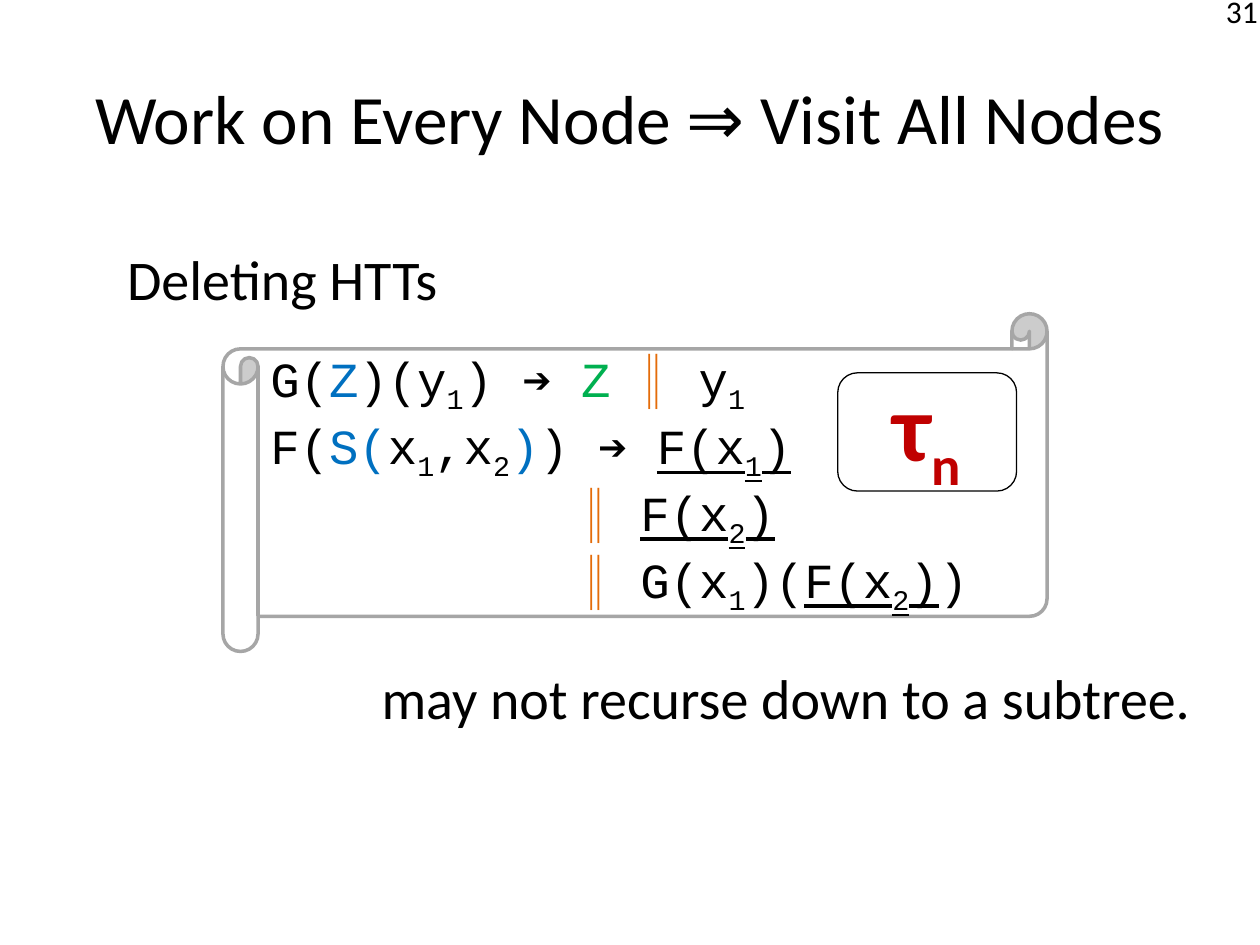
from pptx import Presentation
from pptx.dml.color import RGBColor
from pptx.enum.shapes import MSO_SHAPE as Shape
from pptx.enum.text import MSO_ANCHOR as Anchor, PP_ALIGN as Align
from pptx.util import Inches, Pt

BLACK = RGBColor(0x00, 0x00, 0x00)
WHITE = RGBColor(0xFF, 0xFF, 0xFF)
GRAY = RGBColor(0xA6, 0xA6, 0xA6)
BLUE = RGBColor(0x00, 0x70, 0xC0)
GREEN = RGBColor(0x00, 0xB0, 0x50)
ORANGE = RGBColor(0xE4, 0x6C, 0x0A)
RED = RGBColor(0xC0, 0x00, 0x00)

UNIT = Inches(0.1)  # the slide is a grid of 100 columns and 75 rows
INDENT = Inches(2.47)

# Rules: (indented, parts); "_" lowers the next character
PLAIN, CALL, BAR = (BLACK, False, False), (BLACK, False, True), (ORANGE, True, False)
TREE, OUT = (BLUE, False, False), (GREEN, False, False)
RULES = [
    (False, [("G(", PLAIN), ("Z", TREE), (")(y_1) ➔ ", PLAIN),
             ("Z ", OUT), ("∥ ", BAR), ("y_1", PLAIN)]),
    (False, [("F(", PLAIN), ("S(", TREE), ("x_1,x_2", PLAIN), (")", TREE),
             (") ➔ ", PLAIN), ("F(x_1)", CALL)]),
    (True, [("∥ ", BAR), ("F(x_2)", CALL)]),
    (True, [("∥", BAR), (" G(x_1)(", PLAIN), ("F(x_2)", CALL), (")", PLAIN)]),
]


def grid(*box):
    return [round(n * UNIT) for n in box]


def within(box, x, y, w, h):
    """Box given as shares of another box."""
    left, top, wide, high = box
    return [round(left + x * wide), round(top + y * high),
            round(w * wide), round(h * high)]


def set_font(para, name, size):
    para.font.name, para.font.size = name, Pt(size)


def add_run(para, text, style, low=False):
    if not text:
        return
    run = para.add_run()
    run.text = text
    color, bold, line = style
    run.font.color.rgb = color
    run.font.bold = bold
    run.font.underline = line
    if low:
        run.font._element.set("baseline", "-25000")


def add_part(para, text, style):
    first, *rest = text.split("_")
    add_run(para, first, style)
    for piece in rest:
        add_run(para, piece[0], style, low=True)
        add_run(para, piece[1:], style)


def add_text(slide, box, text, size, align=Align.LEFT, anchor=Anchor.TOP):
    frame = slide.shapes.add_textbox(*box).text_frame
    frame.word_wrap = True
    frame.vertical_anchor = anchor
    para = frame.paragraphs[0]
    para.text = text
    para.alignment = align
    set_font(para, "Calibri", size)
    para.font.color.rgb = BLACK


def add_panel(slide, kind, box, adjust, color, width):
    panel = slide.shapes.add_shape(kind, *box)
    panel.adjustments[0] = adjust
    panel.shadow.inherit = False
    panel.fill.solid()
    panel.fill.fore_color.rgb = WHITE
    panel.line.color.rgb = color
    panel.line.width = Pt(width)
    panel.text_frame.vertical_anchor = Anchor.MIDDLE
    return panel.text_frame


def add_scroll(slide, box):
    # Scroll with the rules
    frame = add_panel(slide, Shape.HORIZONTAL_SCROLL, box, 0.104, GRAY, 2)
    frame.word_wrap = True
    for i, (inset, parts) in enumerate(RULES):
        para = frame.add_paragraph() if i else frame.paragraphs[0]
        para.alignment = Align.LEFT
        set_font(para, "Courier New", 28)
        if inset:
            props = para._p.get_or_add_pPr()
            props.set("marL", str(INDENT))
            props.set("indent", "0")
        for text, style in parts:
            add_part(para, text, style)

    # Name badge
    badge = within(box, 0.746, 0.175, 0.217, 0.35)
    frame = add_panel(slide, Shape.ROUNDED_RECTANGLE, badge, 0.167, BLACK, 0.75)
    frame.word_wrap = False
    para = frame.paragraphs[0]
    para.alignment = Align.CENTER
    set_font(para, "Calibri", 54)
    add_part(para, "τ_n", (RED, True, False))


def main():
    deck = Presentation()
    deck.slide_width, deck.slide_height = 100 * UNIT, 75 * UNIT
    slide = deck.slides.add_slide(deck.slide_layouts[6])

    # Page number and title
    add_text(slide, grid(90.9, -1.1, 9.9, 4), "31", 18, Align.RIGHT)
    add_text(slide, grid(5, 3, 90, 12.5), "Work on Every Node ⇒ Visit All Nodes",
             39.6, Align.CENTER, Anchor.MIDDLE)

    # Statement around the scroll
    add_text(slide, grid(9.1, 18.9, 31.5, 6.6), "Deleting HTTs", 32)
    add_scroll(slide, grid(17.7, 24.9, 65.4, 26.8))
    add_text(slide, grid(29.3, 52.2, 68, 6.6),
             "may not recurse down to a subtree.", 32)
    deck.save("out.pptx")


if __name__ == "__main__":
    main()
